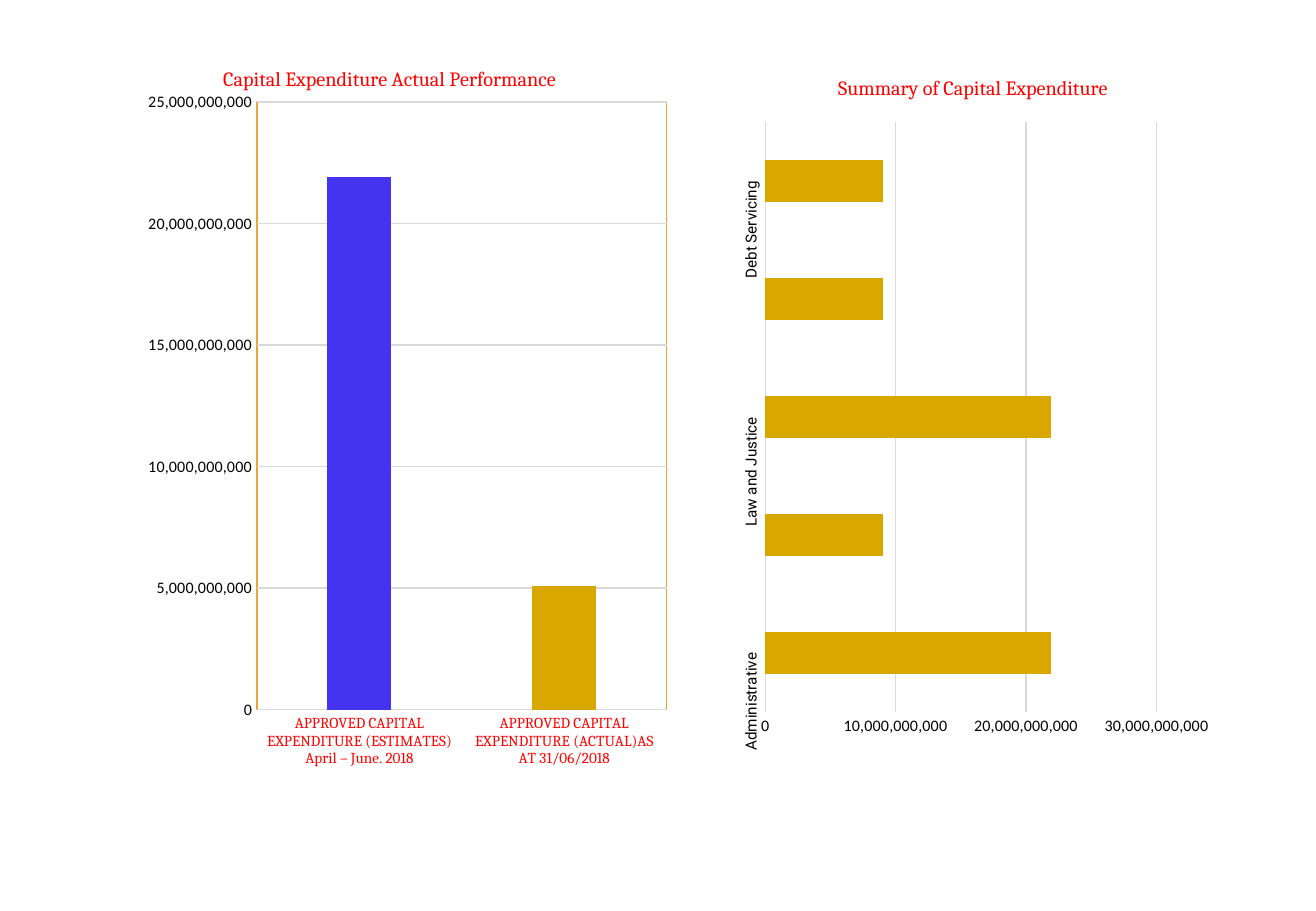
from dataclasses import dataclass

from pptx import Presentation
from pptx.chart.data import CategoryChartData
from pptx.dml.color import RGBColor
from pptx.enum.chart import XL_CHART_TYPE, XL_TICK_MARK
from pptx.oxml import parse_xml
from pptx.oxml.ns import nsdecls, qn
from pptx.util import Emu, Pt

COLUMN = XL_CHART_TYPE.COLUMN_CLUSTERED
BAR = XL_CHART_TYPE.BAR_CLUSTERED
NO_TICK = XL_TICK_MARK.NONE
PX = 9525
BILLION = 1_000_000_000


@dataclass(frozen=True)
class Theme:
    """Colours, fonts and type sizes of the slide."""
    red: str = "FF0000"
    black: str = "000000"
    grid: str = "D9D9D9"
    blue: str = "4434F0"
    gold: str = "DAA600"
    orange: str = "F0A22E"
    serif: str = "Cambria"
    sans: str = "Roboto"
    number: str = "Calibri"
    title_size: float = 12
    base_size: float = 10
    value_size: float = 9.5
    label_size: float = 9
    line_width: float = 0.75


class Deck:
    """Holds the theme and the current slide."""

    def __init__(self, prs, theme):
        self.theme = theme
        self.slide = prs.slides.add_slide(prs.slide_layouts[6])

    def font(self, font, name, size, color):
        """Format a font."""
        font.name, font.size, font.bold = name, Pt(size), False
        font.color.rgb = RGBColor.from_string(color)

    def line(self, line, color):
        """Format a thin line."""
        line.color.rgb = RGBColor.from_string(color)
        line.width = Pt(self.theme.line_width)

    def fill(self, fmt, color):
        """Fill a series or a point."""
        fmt.fill.solid()
        fmt.fill.fore_color.rgb = RGBColor.from_string(color)

    def title(self, chart, text):
        """Add a chart title."""
        t = self.theme
        r = chart.chart_title.text_frame.paragraphs[0].add_run()
        r.text = text
        self.font(r.font, t.serif, t.title_size, t.red)
        chart.chart_title.include_in_layout = False

    def axes(self, chart, top, step, label_font, label_color):
        """Format the category and value axes."""
        t = self.theme
        cat, val = chart.category_axis, chart.value_axis
        for ax in (cat, val):
            ax.major_tick_mark = ax.minor_tick_mark = NO_TICK
        self.font(cat.tick_labels.font, label_font, t.label_size, label_color)
        self.line(cat.format.line, t.grid)
        self.font(val.tick_labels.font, t.number, t.value_size, t.black)
        val.tick_labels.number_format = "#,##0"
        val.tick_labels.number_format_is_linked = False
        val.minimum_scale, val.maximum_scale, val.major_unit = 0, top, step
        val.format.line.fill.background()
        val.has_major_gridlines = True
        self.line(val.major_gridlines.format.line, t.grid)

    def layout(self, chart, frame):
        """Place the inner plot area as fractions of the chart."""
        area = chart._chartSpace.chart.plotArea
        for old in area.findall(qn("c:layout")):
            area.remove(old)
        sizes = "".join(f'<c:{k} val="{v}"/>' for k, v in zip("xywh", frame))
        area.insert(0, parse_xml(
            f'<c:layout {nsdecls("c")}><c:manualLayout>'
            '<c:layoutTarget val="inner"/><c:xMode val="edge"/>'
            f'<c:yMode val="edge"/>{sizes}</c:manualLayout></c:layout>'))

    def plot_border(self, chart, color):
        """Outline the plot area."""
        chart._chartSpace.chart.plotArea.append(parse_xml(
            f'<c:spPr {nsdecls("c", "a")}><a:noFill/>'
            f'<a:ln w="{Pt(self.theme.line_width)}"><a:solidFill>'
            f'<a:srgbClr val="{color}"/></a:solidFill></a:ln></c:spPr>'))

    def turn_labels(self, chart):
        """Turn the category labels to read upwards."""
        body = chart._chartSpace.xpath(".//c:catAx/c:txPr/a:bodyPr")[0]
        body.set("rot", "-5400000")
        body.set("vert", "horz")

    def chart(self, kind, box, title, values, color, gap, overlap=0):
        """Add a titled chart with one series."""
        t = self.theme
        data = CategoryChartData(number_format="#,##0")
        data.categories = list(values)
        data.add_series("Series 1", list(values.values()))
        place = [Emu(n * PX) for n in box]
        chart = self.slide.shapes.add_chart(kind, *place, data).chart
        self.font(chart.font, t.sans, t.base_size, t.black)
        chart.has_legend = False
        plot = chart.plots[0]
        plot.vary_by_categories = False
        plot.gap_width, plot.overlap = gap, overlap
        self.fill(plot.series[0].format, color)
        self.title(chart, title)
        return chart


def main():
    """Build the capital expenditure slide."""
    prs = Presentation()
    prs.slide_width, prs.slide_height = Emu(1040 * PX), Emu(720 * PX)
    t = Theme()
    deck = Deck(prs, t)

    performance = {
        "APPROVED CAPITAL EXPENDITURE (ESTIMATES) April – June. 2018": 21.9 * BILLION,
        "APPROVED CAPITAL EXPENDITURE (ACTUAL)AS AT 31/06/2018": 5.1 * BILLION,
    }
    chart = deck.chart(COLUMN, (80, 32, 456, 608),
                       "Capital Expenditure Actual Performance",
                       performance, t.orange, 219, -27)
    for i, color in enumerate((t.blue, t.gold)):
        deck.fill(chart.plots[0].series[0].points[i].format, color)
    deck.axes(chart, 25 * BILLION, 5 * BILLION, t.serif, t.red)
    deck.layout(chart, (0.27, 0.08, 0.71, 0.79))
    deck.plot_border(chart, t.orange)

    summary = {
        "Administrative": 21.9 * BILLION,
        "Economic": 9 * BILLION,
        "Law and Justice": 21.9 * BILLION,
        "Social Service Sector": 9 * BILLION,
        "Debt Servicing": 9 * BILLION,
    }
    chart = deck.chart(BAR, (578, 40, 382, 568), "Summary of Capital Expenditure",
                       summary, t.gold, 182)
    deck.axes(chart, 30 * BILLION, 10 * BILLION, t.sans, t.black)
    deck.layout(chart, (0.07, 0.1, 0.81, 0.82))
    deck.turn_labels(chart)

    prs.save("out.pptx")


if __name__ == "__main__":
    main()
